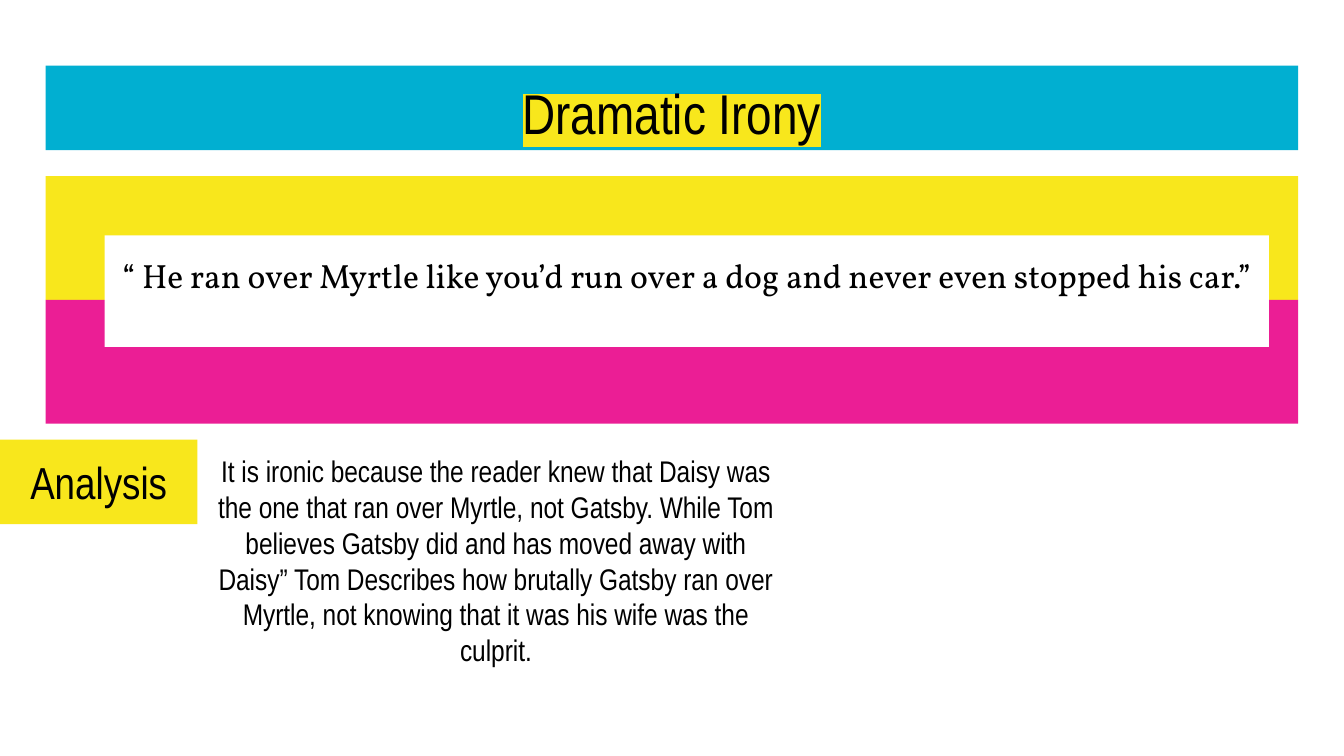
"""Build the Dramatic Irony slide: title bar, quotation on colour bands, and analysis."""
from lxml.etree import SubElement
from pptx import Presentation
from pptx.dml.color import RGBColor
from pptx.enum.shapes import MSO_SHAPE
from pptx.enum.text import MSO_ANCHOR, PP_ALIGN
from pptx.oxml.ns import qn
from pptx.util import Cm, Pt

TITLE = "Dramatic Irony"
QUOTATION = "“ He ran over Myrtle like you’d run over a dog and never even stopped his car.”"
HEADING = "Analysis"
ANALYSIS = (
    "It is ironic because the reader knew that Daisy was the one that ran over Myrtle, "
    "not Gatsby. While Tom believes Gatsby did and has moved away with Daisy” Tom Describes "
    "how brutally Gatsby ran over Myrtle, not knowing that it was his wife was the culprit."
)
CYAN, YELLOW, MAGENTA, WHITE, BLACK = "01AFD1", "F8E71C", "EB1E95", "FFFFFF", "000000"
SANS, SERIF = "Arial Narrow", "Vollkorn"

SLIDE_WIDTH, SLIDE_HEIGHT = 25.4, 14.29
BAND_WIDTH, BAND_HEIGHT = 23.67, 2.34
BAND_LEFT = (SLIDE_WIDTH - BAND_WIDTH) / 2
BANDS_TOP = 3.33
BAR_HEIGHT = 1.6
ANALYSIS_TOP = 8.31


def color(value):
    return RGBColor.from_string(value)


def add_box(slide, left, top, width, height, fill):
    shape = slide.shapes.add_shape(
        MSO_SHAPE.RECTANGLE, Cm(left), Cm(top), Cm(width), Cm(height)
    )
    shape.shadow.inherit = False
    shape.fill.solid()
    shape.fill.fore_color.rgb = color(fill)
    shape.line.fill.background()
    return shape


def write(shape, text, size, font=SANS, anchor=MSO_ANCHOR.TOP):
    frame = shape.text_frame
    frame.word_wrap = True
    frame.vertical_anchor = anchor
    frame.margin_left = frame.margin_right = Cm(0.25)
    frame.margin_top = frame.margin_bottom = Cm(0.25)
    paragraph = frame.paragraphs[0]
    paragraph.alignment = PP_ALIGN.CENTER
    run = paragraph.add_run()
    run.text = text
    run.font.size = Pt(size)
    run.font.name = font
    run.font.color.rgb = color(BLACK)
    return paragraph


def highlight(run, value):
    properties = run.font._element if hasattr(run.font, "_element") else run._r.get_or_add_rPr()
    mark = SubElement(properties, qn("a:highlight"))
    SubElement(mark, qn("a:srgbClr"), val=value)
    properties.find(qn("a:solidFill")).addnext(mark)


def main():
    presentation = Presentation()
    presentation.slide_width = Cm(SLIDE_WIDTH)
    presentation.slide_height = Cm(SLIDE_HEIGHT)
    slide = presentation.slides.add_slide(presentation.slide_layouts[6])

    title_bar = add_box(slide, BAND_LEFT, 1.24, BAND_WIDTH, BAR_HEIGHT, CYAN)
    title = write(title_bar, TITLE, 30)
    highlight(title.runs[0], YELLOW)

    heading_box = add_box(slide, 0, ANALYSIS_TOP, 3.73, BAR_HEIGHT, YELLOW)
    write(heading_box, HEADING, 24, anchor=MSO_ANCHOR.MIDDLE)

    analysis_box = slide.shapes.add_textbox(Cm(2.44), Cm(ANALYSIS_TOP), Cm(12.6), Cm(3.78))
    analysis = write(analysis_box, ANALYSIS, 16)
    analysis._p.get_or_add_pPr().set("marL", str(Cm(1.27)))

    for index, fill in enumerate((YELLOW, MAGENTA)):
        top = BANDS_TOP + index * BAND_HEIGHT
        add_box(slide, BAND_LEFT, top, BAND_WIDTH, BAND_HEIGHT, fill)

    quotation_box = add_box(slide, 1.98, 4.45, 22, 2.11, WHITE)
    quotation = write(quotation_box, QUOTATION, 18, SERIF)
    quotation.line_spacing = 1.15
    quotation.space_after = Pt(16)

    presentation.save("out.pptx")


if __name__ == "__main__":
    main()
